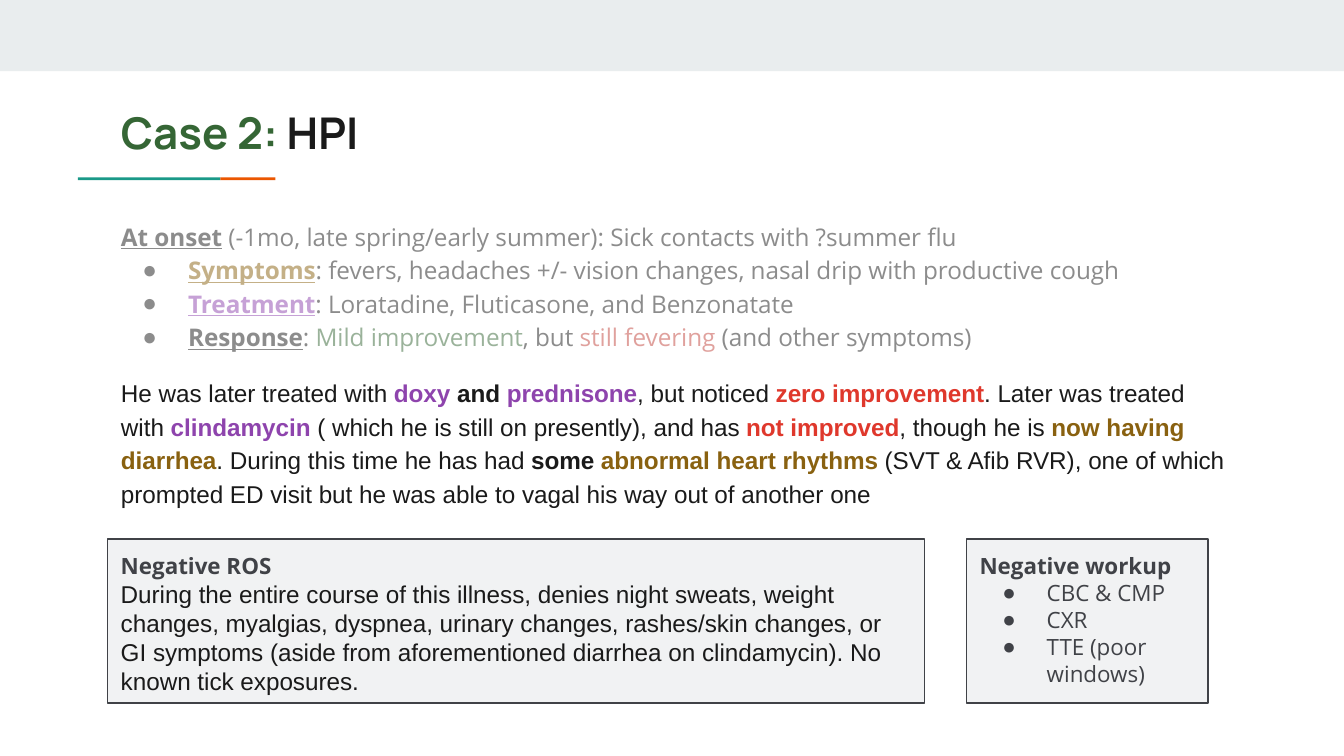
from lxml.etree import SubElement
from pptx import Presentation
from pptx.dml.color import RGBColor
from pptx.enum.shapes import MSO_SHAPE as Shape
from pptx.enum.text import MSO_ANCHOR as Anchor, MSO_AUTO_SIZE as AutoSize, PP_ALIGN as Align
from pptx.oxml.ns import qn
from pptx.util import Inches, Pt

COLORS = {
    "white": "FFFFFF", "band": "E9EDEE", "teal": "1A9988", "orange": "EB5600",
    "ink": "1A1A1A", "green": "356635", "gold": "896110", "purple": "8E44AD",
    "rose": "C1443C", "red": "DF382C", "slate": "404247", "panel": "F1F2F3",
}
WIDTH = 10
HEIGHT = WIDTH * 9 / 16
LEFT, COLUMN = 0.8, 8.41
PANEL_TOP, PANEL_HEIGHT = 4.01, 1.22
RULE_LEFT, RULE_TOP, RULE_HEIGHT = 0.58, 1.32, 0.02

HEADING = {"bold": True, "underline": True}
STRONG = {"bold": True}
PLAIN = {}

TITLE = [("Case 2:", "green", STRONG), (" HPI", "ink", STRONG)]
ONSET = [
    ("At onset", "ink", HEADING),
    (" (-1mo, late spring/early summer): Sick contacts with ?summer flu", "ink", PLAIN),
]
DETAILS = [
    [("Symptoms", "gold", HEADING),
     (": fevers, headaches +/- vision changes, nasal drip with productive cough", "ink", PLAIN)],
    [("Treatment", "purple", HEADING),
     (": Loratadine, Fluticasone, and Benzonatate", "ink", PLAIN)],
    [("Response", "ink", HEADING), (": ", "ink", PLAIN),
     ("Mild improvement", "green", PLAIN), (", but ", "ink", PLAIN),
     ("still fevering", "rose", PLAIN), (" (and other symptoms)", "ink", PLAIN)],
]
COURSE = [
    ("He was later treated with ", "ink", PLAIN),
    ("doxy ", "purple", STRONG),
    ("and ", "ink", STRONG),
    ("prednisone", "purple", STRONG),
    (", but noticed ", "ink", PLAIN),
    ("zero improvement", "red", STRONG),
    (". Later was treated with ", "ink", PLAIN),
    ("clindamycin ", "purple", STRONG),
    ("( which he is still on presently), and has ", "ink", PLAIN),
    ("not improved", "red", STRONG),
    (", though he is ", "ink", PLAIN),
    ("now having diarrhea", "gold", STRONG),
    (". During this time he has had ", "ink", PLAIN),
    ("some ", "ink", STRONG),
    ("abnormal heart rhythms", "gold", STRONG),
    (" (SVT & Afib RVR), one of which prompted ED visit but he was able to vagal "
     "his way out of another one", "ink", PLAIN),
]
ROS = (
    "During the entire course of this illness, denies night sweats, weight changes, "
    "myalgias, dyspnea, urinary changes, rashes/skin changes, or GI symptoms (aside from "
    "aforementioned diarrhea on clindamycin). No known tick exposures."
)
WORKUP = ["CBC & CMP", "CXR", "TTE (poor windows)"]
RULES = [("teal", 1.06), ("orange", 0.41)]


def rgb(name):
    return RGBColor.from_string(COLORS[name])


def paragraph(spans, font, size, bullet=None, hang=0.34, line=1.0, gap=0):
    return {"spans": spans, "font": font, "size": size, "bullet": bullet,
            "hang": hang, "line": line, "gap": gap}


def place(shape, left, top, width, height):
    bounds = {"left": left, "top": top, "width": width, "height": height}
    for name, value in bounds.items():
        setattr(shape, name, Inches(value))


def add_bullet(para, color, hang):
    props = para._p.get_or_add_pPr()
    props.set("marL", str(Inches(0.5) if color else 0))
    props.set("indent", str(-Inches(hang) if color else 0))
    if not color:
        SubElement(props, qn("a:buNone"))
        return
    tint = SubElement(props, qn("a:buClr"))
    SubElement(tint, qn("a:srgbClr"), val=COLORS[color])
    SubElement(props, qn("a:buFont"), typeface="Arial")
    SubElement(props, qn("a:buChar"), char="●")


def write(shape, paragraphs):
    frame = shape.text_frame
    layout = {"word_wrap": True, "auto_size": AutoSize.NONE, "vertical_anchor": Anchor.TOP}
    layout |= {f"margin_{side}": Inches(0.1) for side in ("left", "top", "right", "bottom")}
    for name, value in layout.items():
        setattr(frame, name, value)
    for index, item in enumerate(paragraphs):
        para = frame.add_paragraph() if index else frame.paragraphs[0]
        spacing = {"alignment": Align.LEFT, "line_spacing": item["line"],
                   "space_before": Pt(item["gap"]), "space_after": Pt(item["gap"])}
        for name, value in spacing.items():
            setattr(para, name, value)
        add_bullet(para, item["bullet"], item["hang"])
        for text, color, style in item["spans"]:
            span = para.add_run()
            span.text = text
            look = {"name": item["font"], "size": Pt(item["size"]), "bold": False} | style
            for name, value in look.items():
                setattr(span.font, name, value)
            span.font.color.rgb = rgb(color)


def add_box(page, bounds, fill, line=None):
    box = page.shapes.add_shape(Shape.RECTANGLE, *map(Inches, bounds))
    box.shadow.inherit = False
    box.fill.solid()
    box.fill.fore_color.rgb = rgb(fill)
    if line:
        box.line.color.rgb = rgb(line)
        box.line.width = Pt(0.75)
    else:
        box.line.fill.background()
    return box


def main():
    deck = Presentation()
    deck.slide_width, deck.slide_height = Inches(WIDTH), Inches(HEIGHT)
    page = deck.slides.add_slide(deck.slide_layouts[1])
    title, body = page.placeholders

    add_box(page, (0, 0, WIDTH, 0.53), "band")
    left = RULE_LEFT
    for color, width in RULES:
        add_box(page, (left, RULE_TOP, width, RULE_HEIGHT), color)
        left += width

    place(title, LEFT, 0.69, COLUMN, 0.59)
    write(title, [paragraph(TITLE, "Manrope", 23.4)])

    place(body, LEFT, 1.52, COLUMN, 3.4)
    details = [paragraph(spans, "Open Sans", 13, bullet="ink", line=1.15) for spans in DETAILS]
    write(body, [paragraph(ONSET, "Open Sans", 13, line=1.15), *details,
                 paragraph(COURSE, "Arial", 13, line=1.15, gap=12)])

    veil = add_box(page, (0.73, 1.52, COLUMN, 1.22), "white")
    veil_color = veil.fill._xPr.find(qn("a:solidFill"))[0]
    SubElement(veil_color, qn("a:alpha"), val="50000")

    ros = paragraph([(ROS, "ink", PLAIN)], "Arial", 13)
    workup = [paragraph([(test, "slate", PLAIN)], "Open Sans", 12, bullet="slate", hang=0.33)
              for test in WORKUP]
    panels = [("Negative ROS", 0.8, 6.08, [ros]), ("Negative workup", 7.19, 1.8, workup)]
    for heading, left, width, content in panels:
        panel = add_box(page, (left, PANEL_TOP, width, PANEL_HEIGHT), "panel", "slate")
        write(panel, [paragraph([(heading, "slate", STRONG)], "Open Sans", 12), *content])

    deck.save("out.pptx")


if __name__ == "__main__":
    main()
